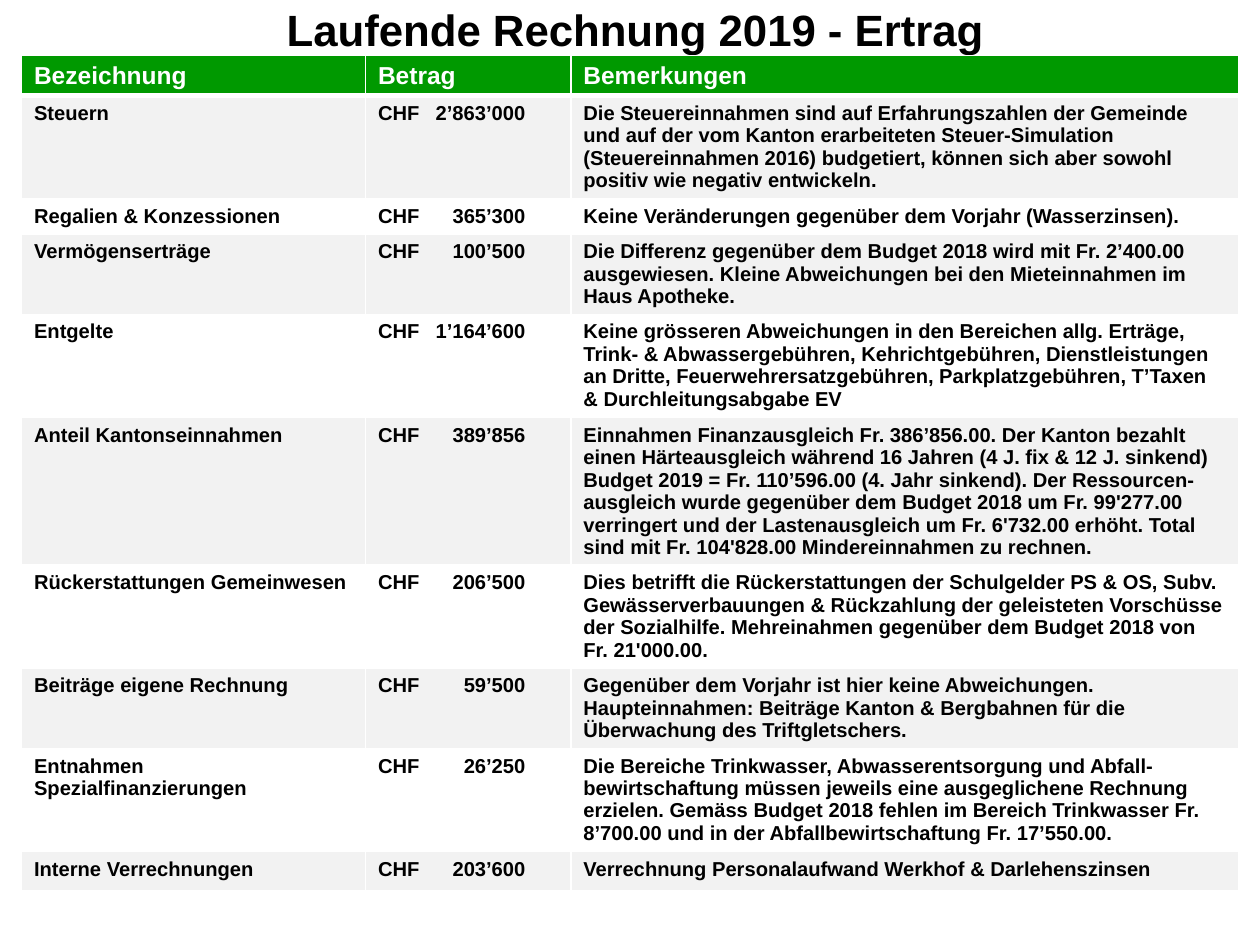
import pptx
import pptx.util
import pptx.dml.color
import pptx.enum.text
import pptx.oxml
import pptx.oxml.ns
from pptx.util import Inches, Pt

FONT = "Arial"
COLUMNS = [2.73, 1.63, 5.3]
HEADER = ["Bezeichnung", "Betrag", "Bemerkungen"]
HEADER_HEIGHT = 0.32
ROWS = [
    ("Steuern", "2’863’000", 0.82,
     "Die Steuereinnahmen sind auf Erfahrungszahlen der Gemeinde und auf der vom Kanton "
     "erarbeiteten Steuer-Simulation (Steuereinnahmen 2016) budgetiert, können sich aber "
     "sowohl positiv wie negativ entwickeln."),
    ("Regalien & Konzessionen", "365’300", 0.28,
     "Keine Veränderungen gegenüber dem Vorjahr (Wasserzinsen)."),
    ("Vermögenserträge", "100’500", 0.63,
     "Die Differenz gegenüber dem Budget 2018 wird mit Fr. 2’400.00 ausgewiesen. Kleine "
     "Abweichungen bei den Mieteinnahmen im Haus Apotheke."),
    ("Entgelte", "1’164’600", 0.82,
     "Keine grösseren Abweichungen in den Bereichen allg. Erträge, Trink- & "
     "Abwassergebühren, Kehrichtgebühren, Dienstleistungen an Dritte, "
     "Feuerwehrersatzgebühren, Parkplatzgebühren, T’Taxen & Durchleitungsabgabe EV"),
    ("Anteil Kantonseinnahmen", "389’856", 1.16,
     "Einnahmen Finanzausgleich Fr. 386’856.00. Der Kanton bezahlt einen Härteausgleich "
     "während 16 Jahren (4 J. fix & 12 J. sinkend) Budget 2019 = Fr. 110’596.00 (4. Jahr "
     "sinkend). Der Ressourcen-ausgleich wurde gegenüber dem Budget 2018 um Fr. 99'277.00 "
     "verringert und der Lastenausgleich um Fr. 6'732.00 erhöht. Total sind mit "
     "Fr. 104'828.00 Mindereinnahmen zu rechnen."),
    ("Rückerstattungen Gemeinwesen", "206’500", 0.82,
     "Dies betrifft die Rückerstattungen der Schulgelder PS & OS, Subv. "
     "Gewässerverbauungen & Rückzahlung der geleisteten Vorschüsse der Sozialhilfe. "
     "Mehreinahmen gegenüber dem Budget 2018 von Fr. 21'000.00."),
    ("Beiträge eigene Rechnung", "59’500", 0.63,
     "Gegenüber dem Vorjahr ist hier keine Abweichungen. Haupteinnahmen: Beiträge Kanton "
     "& Bergbahnen für die Überwachung des Triftgletschers."),
    ("Entnahmen Spezialfinanzierungen", "26’250", 0.82,
     "Die Bereiche Trinkwasser, Abwasserentsorgung und Abfall-bewirtschaftung müssen "
     "jeweils eine ausgeglichene Rechnung erzielen. Gemäss Budget 2018 fehlen im Bereich "
     "Trinkwasser Fr. 8’700.00 und in der Abfallbewirtschaftung Fr. 17’550.00."),
    ("Interne Verrechnungen", "203’600", 0.31,
     "Verrechnung Personalaufwand Werkhof & Darlehenszinsen"),
]


def rgb(value):
    return pptx.dml.color.RGBColor.from_string(value)


def format_text(tf, size, color):
    for p in tf.paragraphs:
        for r in p.runs:
            r.font.name = FONT
            r.font.size = Pt(size)
            r.font.bold = True
            r.font.color.rgb = rgb(color)


def add_title(s, text, left, top, width, height):
    sp = s.shapes.title
    sp.left, sp.top, sp.width, sp.height = map(Inches, (left, top, width, height))
    tf = sp.text_frame
    tf.text = text
    tf.word_wrap = True
    tf.auto_size = pptx.enum.text.MSO_AUTO_SIZE.NONE
    tf.vertical_anchor = pptx.enum.text.MSO_ANCHOR.MIDDLE
    tf.paragraphs[0].alignment = pptx.enum.text.PP_ALIGN.CENTER
    format_text(tf, 25, "000000")


def add_borders(cell, widths):
    tcPr = cell._tc.get_or_add_tcPr()
    for side, width in widths.items():
        tcPr.append(pptx.oxml.parse_xml(
            f'<a:ln{side} {pptx.oxml.ns.nsdecls("a")} w="{Pt(width)}"><a:solidFill>'
            f'<a:srgbClr val="FFFFFF"/></a:solidFill></a:ln{side}>'))


def add_right_tab(p, position):
    p._p.get_or_add_pPr().append(pptx.oxml.parse_xml(
        f'<a:tabLst {pptx.oxml.ns.nsdecls("a")}>'
        f'<a:tab pos="{Inches(position)}" algn="r"/></a:tabLst>'))


def fill_cell(cell, text, size, color, fill, top=1, bottom=1):
    cell.text_frame.text = text
    format_text(cell.text_frame, size, color)
    add_borders(cell, {"L": 1, "R": 1, "T": top, "B": bottom})
    cell.fill.solid()
    cell.fill.fore_color.rgb = rgb(fill)


def add_income_table(s, left, top, width):
    heights = [HEADER_HEIGHT] + [height for _, _, height, _ in ROWS]
    table = s.shapes.add_table(len(heights), len(COLUMNS), Inches(left), Inches(top),
                               Inches(width), Inches(sum(heights))).table
    for column, share in zip(table.columns, COLUMNS):
        column.width = Inches(width * share / sum(COLUMNS))
    for row, height in zip(table.rows, heights):
        row.height = Inches(height)
    for cell, text in zip(table.rows[0].cells, HEADER):
        fill_cell(cell, text, 14, "FFFFFF", "009900", bottom=3)
    for i, (name, amount, _, remark) in enumerate(ROWS, 1):
        fill = "F2F2F2" if i % 2 else "FFFFFF"
        cells = table.rows[i].cells
        for cell, text in zip(cells, (name, f"CHF\t{amount}", remark)):
            fill_cell(cell, text, 11.5, "000000", fill, top=3 if i == 1 else 1)
        add_right_tab(cells[1].text_frame.paragraphs[0], 1.17)


def main():
    prs = pptx.Presentation()
    prs.slide_width, prs.slide_height = Inches(10), Inches(7.5)
    s = prs.slides.add_slide(prs.slide_layouts[5])
    add_income_table(s, 0.17, 0.44, 9.66)
    add_title(s, "Laufende Rechnung 2019 - Ertrag", 0.04, -0.03, 10, 0.52)
    prs.save("out.pptx")


if __name__ == "__main__":
    main()
